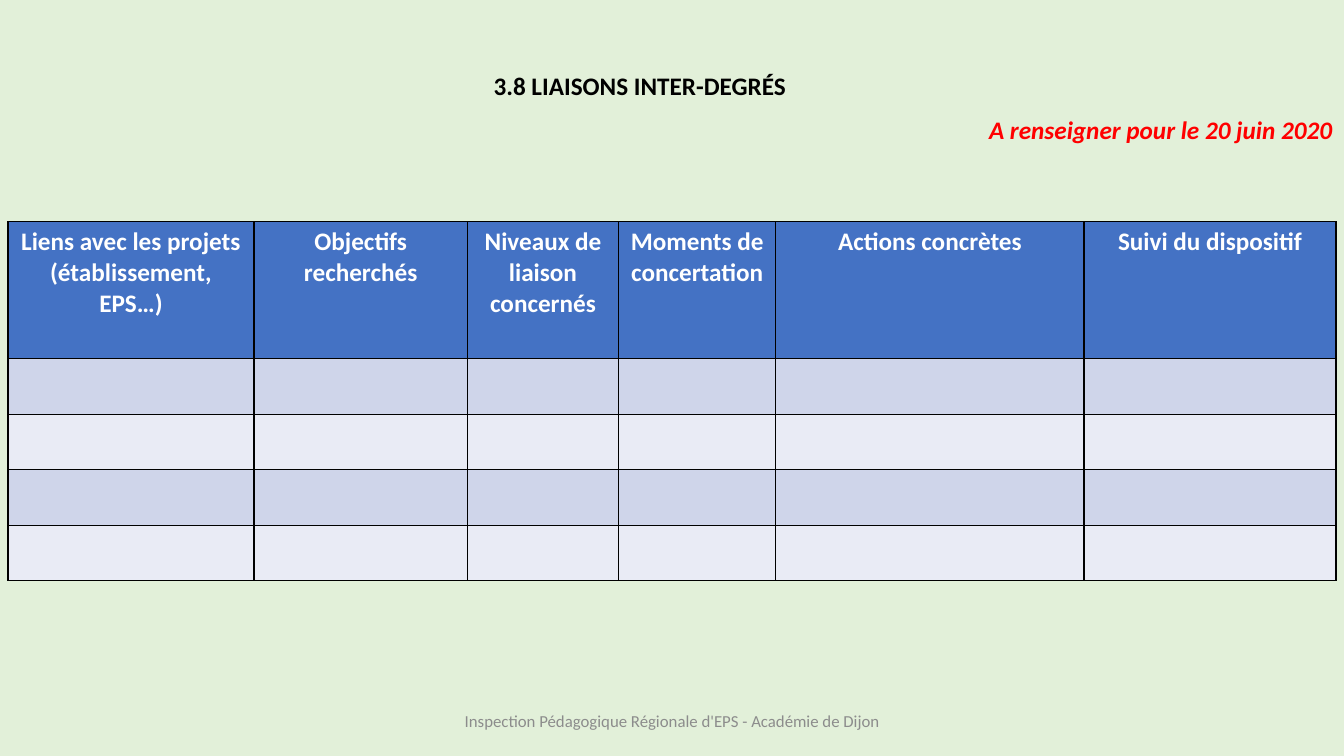
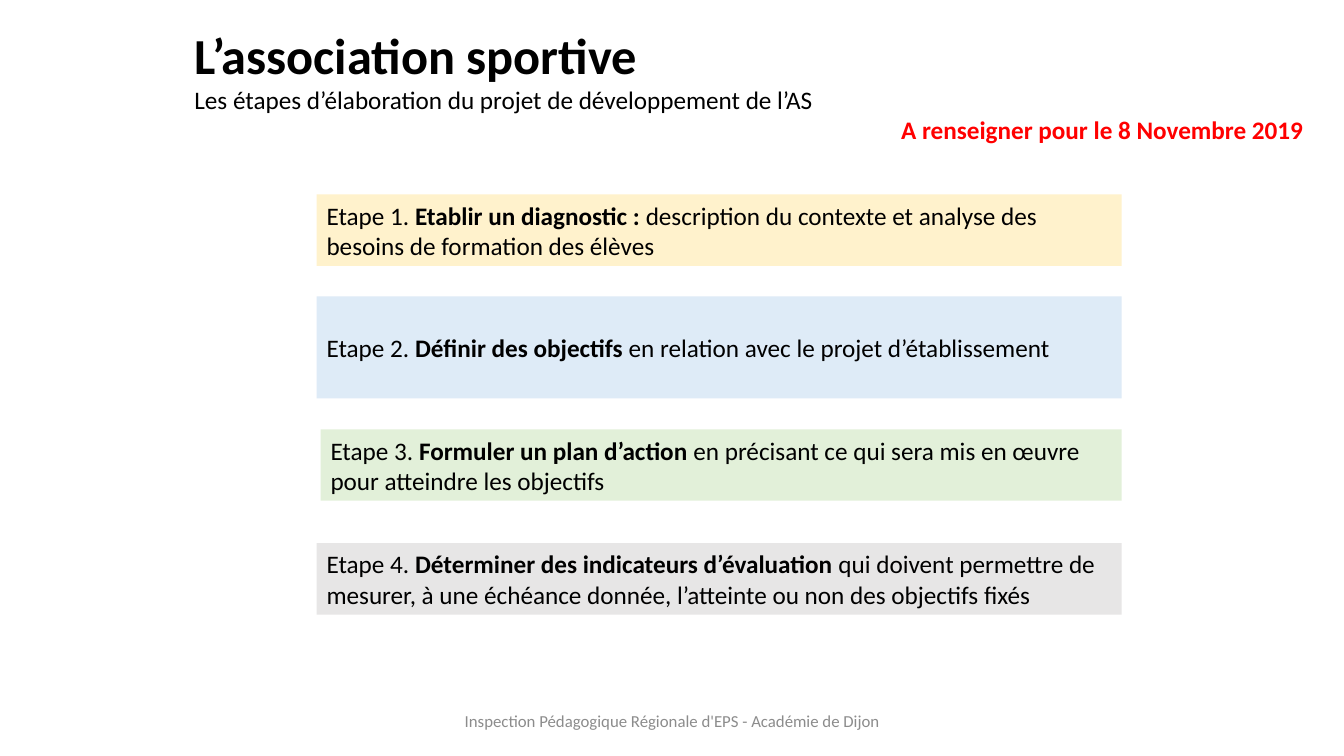
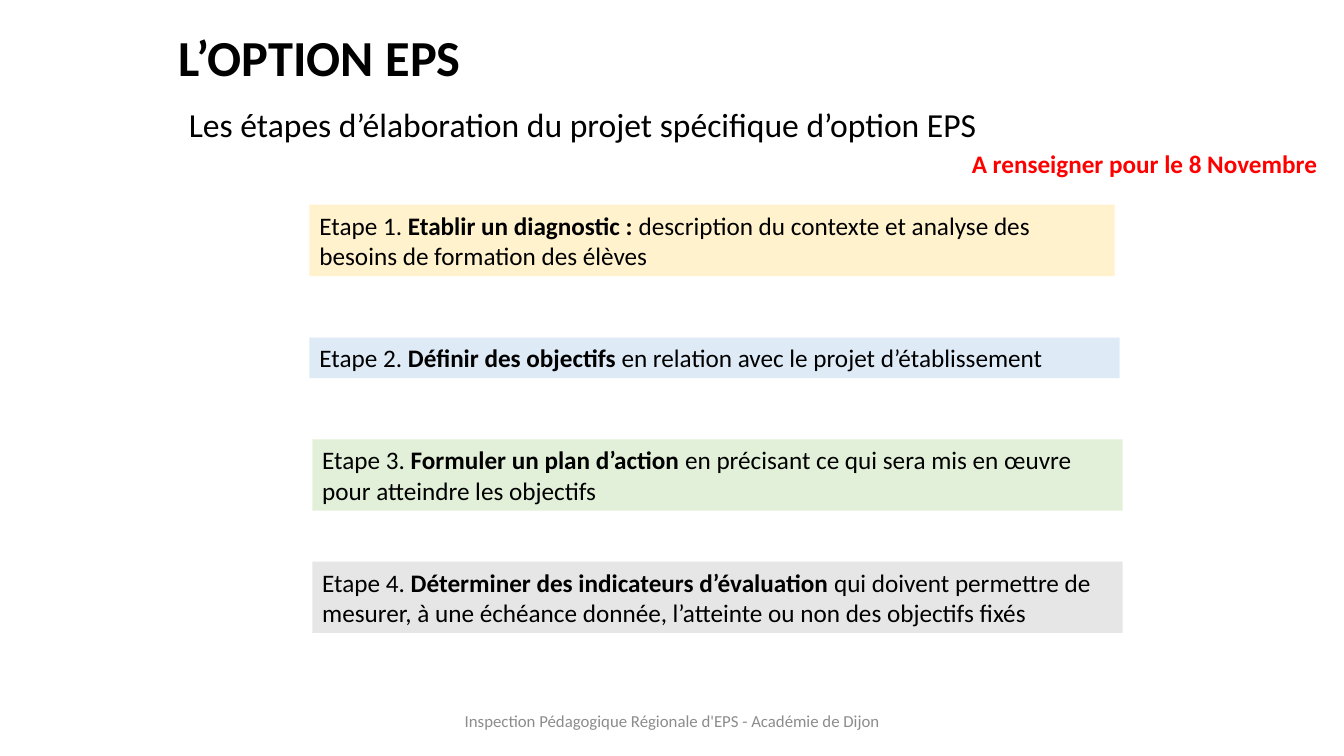
from lxml import etree
from pptx import Presentation
from pptx.dml.color import RGBColor
from pptx.enum.shapes import MSO_SHAPE
from pptx.enum.text import MSO_ANCHOR, PP_ALIGN
from pptx.oxml.ns import qn
from pptx.util import Cm, Pt

RECTANGLE = MSO_SHAPE.RECTANGLE
TOP, MIDDLE = MSO_ANCHOR.TOP, MSO_ANCHOR.MIDDLE
LEFT, CENTER, RIGHT = PP_ALIGN.LEFT, PP_ALIGN.CENTER, PP_ALIGN.RIGHT

FONT = "Calibri"
BLACK, WHITE, RED, GREY = "000000", "FFFFFF", "FF0000", "8C8C8C"
PALE_GREEN = "E2F0D9"
HEADER_FILL = "4472C4"
BAND_FILLS = ("CFD5EA", "E9EBF5")

FOOTER = "Inspection Pédagogique Régionale d'EPS - Académie de Dijon"
FOOTER_BOX = (11.23, 17.65, 11.43, 1.02)

STEPS = [
    ("FFF2CC", "Etape 1. ", "Etablir un diagnostic : ",
     "description du contexte et analyse des besoins de formation des élèves"),
    ("DEEBF7", "Etape 2. ", "Définir des objectifs ",
     "en relation avec le projet d’établissement"),
    (PALE_GREEN, "Etape 3. ", "Formuler un plan d’action ",
     "en précisant ce qui sera mis en œuvre pour atteindre les objectifs"),
    ("E7E6E6", "Etape 4. ", "Déterminer des indicateurs d’évaluation ",
     "qui doivent permettre de mesurer, à une échéance donnée, "
     "l’atteinte ou non des objectifs fixés"),
]

HEADERS = [
    "Liens avec les projets\n(établissement, EPS…)",
    "Objectifs recherchés",
    "Niveaux de liaison concernés",
    "Moments de concertation",
    "Actions concrètes",
    "Suivi du dispositif",
]
COLUMN_WIDTHS = (6.2, 5.38, 3.81, 3.96, 7.77, 6.35)
ROW_HEIGHTS = (3.45, 1.4, 1.4, 1.4, 1.4)


def color(value):
    """Turn a hex string into a colour."""
    return RGBColor.from_string(value)


def paint(target, value):
    """Give a shape, cell or background a solid fill."""
    target.fill.solid()
    target.fill.fore_color.rgb = color(value)


def style(span, size=18, ink=BLACK, bold=False, italic=False):
    """Format one run."""
    span.font.name = FONT
    span.font.size = Pt(size)
    span.font.color.rgb = color(ink)
    span.font.bold = bold
    span.font.italic = italic


def add_text_box(page, box, anchor=TOP):
    """Place a wrapping text box and return its frame."""
    frame = page.shapes.add_textbox(*map(Cm, box)).text_frame
    frame.word_wrap = True
    frame.vertical_anchor = anchor
    return frame


def add_page(deck, background=WHITE):
    """Add a blank page with its background and footer."""
    page = deck.slides.add_slide(deck.slide_layouts[6])
    paint(page.background, background)
    para = add_text_box(page, FOOTER_BOX, MIDDLE).paragraphs[0]
    para.text = FOOTER
    para.alignment = CENTER
    style(para.runs[0], 12, GREY)
    return page


def add_heading(page, box, lines):
    """Write heading lines of text, run format, alignment, space before and indent."""
    frame = add_text_box(page, box)
    frame.text = "\n".join(line[0] for line in lines)
    for para, (_, look, alignment, space, indent) in zip(frame.paragraphs, lines):
        para.alignment = alignment
        para.space_before = Pt(space)
        para._p.get_or_add_pPr().set("marL", str(Cm(indent)))
        style(para.runs[0], **look)


def add_step(page, box, step):
    """Draw one coloured step with its name in bold."""
    fill, number, name, detail = step
    shape = page.shapes.add_shape(RECTANGLE, *map(Cm, box))
    shape.shadow.inherit = False
    paint(shape, fill)
    shape.line.fill.background()
    frame = shape.text_frame
    frame.word_wrap = True
    frame.vertical_anchor = MIDDLE
    para = frame.paragraphs[0]
    para.alignment = LEFT
    for text in (number, name, detail):
        span = para.add_run()
        span.text = text
        style(span, bold=text == name)


def add_steps(page, boxes):
    """Draw the four steps in their boxes."""
    for box, step in zip(boxes, STEPS):
        add_step(page, box, step)


def add_borders(cell):
    """Draw thin black lines around a cell."""
    properties = cell._tc.get_or_add_tcPr()
    for position, side in enumerate(("a:lnL", "a:lnR", "a:lnT", "a:lnB")):
        line = etree.Element(qn(side), w=str(Pt(1)))
        fill = etree.SubElement(line, qn("a:solidFill"))
        etree.SubElement(fill, qn("a:srgbClr"), val=BLACK)
        properties.insert(position, line)


def add_liaison_table(page, left, top):
    """Place the liaison table with a header and empty banded rows."""
    table = page.shapes.add_table(
        len(ROW_HEIGHTS), len(COLUMN_WIDTHS), Cm(left), Cm(top),
        Cm(sum(COLUMN_WIDTHS)), Cm(sum(ROW_HEIGHTS))).table
    for column, width in zip(table.columns, COLUMN_WIDTHS):
        column.width = Cm(width)
    for index, (row, height) in enumerate(zip(table.rows, ROW_HEIGHTS)):
        row.height = Cm(height)
        for cell in row.cells:
            paint(cell, BAND_FILLS[(index - 1) % 2] if index else HEADER_FILL)
            add_borders(cell)
    for cell, header in zip(table.rows[0].cells, HEADERS):
        cell.text_frame.text = header
        for para in cell.text_frame.paragraphs:
            para.alignment = CENTER
            style(para.runs[0], ink=WHITE, bold=True)


def build_liaison_page(deck):
    """Build the page on liaisons between school levels."""
    page = add_page(deck, PALE_GREEN)
    add_heading(page, (12.19, 1.65, 21.64, 3.51), [
        ("3.8 LIAISONS INTER-DEGRÉS", {"bold": True}, LEFT, 0, 0),
        ("A renseigner pour le 20 juin 2020",
         {"ink": RED, "bold": True, "italic": True}, RIGHT, 9.5, 0),
    ])
    add_liaison_table(page, 0.2, 5.59)


def build_association_page(deck):
    """Build the page on the sports association."""
    page = add_page(deck)
    add_heading(page, (4.65, 0.48, 28.45, 4.01), [
        ("L’association sportive", {"size": 36, "bold": True}, LEFT, 0, 0),
        ("Les étapes d’élaboration du projet de développement de l’AS",
         {}, LEFT, 0, 0),
        ("A renseigner pour le 8 Novembre 2019",
         {"ink": RED, "bold": True}, RIGHT, 0, 0),
    ])
    add_steps(page, [
        (7.98, 4.9, 20.29, 1.8),
        (7.98, 7.47, 20.29, 2.57),
        (8.08, 10.82, 20.19, 1.8),
        (7.98, 13.69, 20.29, 1.8),
    ])


def build_option_page(deck):
    """Build the page on the optional course."""
    page = add_page(deck)
    add_heading(page, (0.76, 0.53, 32.69, 4.4), [
        ("L’OPTION EPS", {"size": 36, "bold": True}, LEFT, 0, 3.5),
        ("Les étapes d’élaboration du projet spécifique d’option EPS",
         {"size": 24}, LEFT, 12.5, 3.75),
        ("A renseigner pour le 8 Novembre",
         {"ink": RED, "bold": True}, RIGHT, 3, 0),
    ])
    add_steps(page, [
        (7.8, 5.16, 20.29, 1.8),
        (7.8, 8.51, 20.42, 1.02),
        (7.87, 11.07, 20.42, 1.8),
        (7.87, 14.15, 20.42, 1.8),
    ])


def main():
    """Build and save the deck."""
    deck = Presentation()
    deck.slide_width, deck.slide_height = Cm(33.87), Cm(19.05)
    build_liaison_page(deck)
    build_association_page(deck)
    build_option_page(deck)
    deck.save("out.pptx")


if __name__ == "__main__":
    main()
